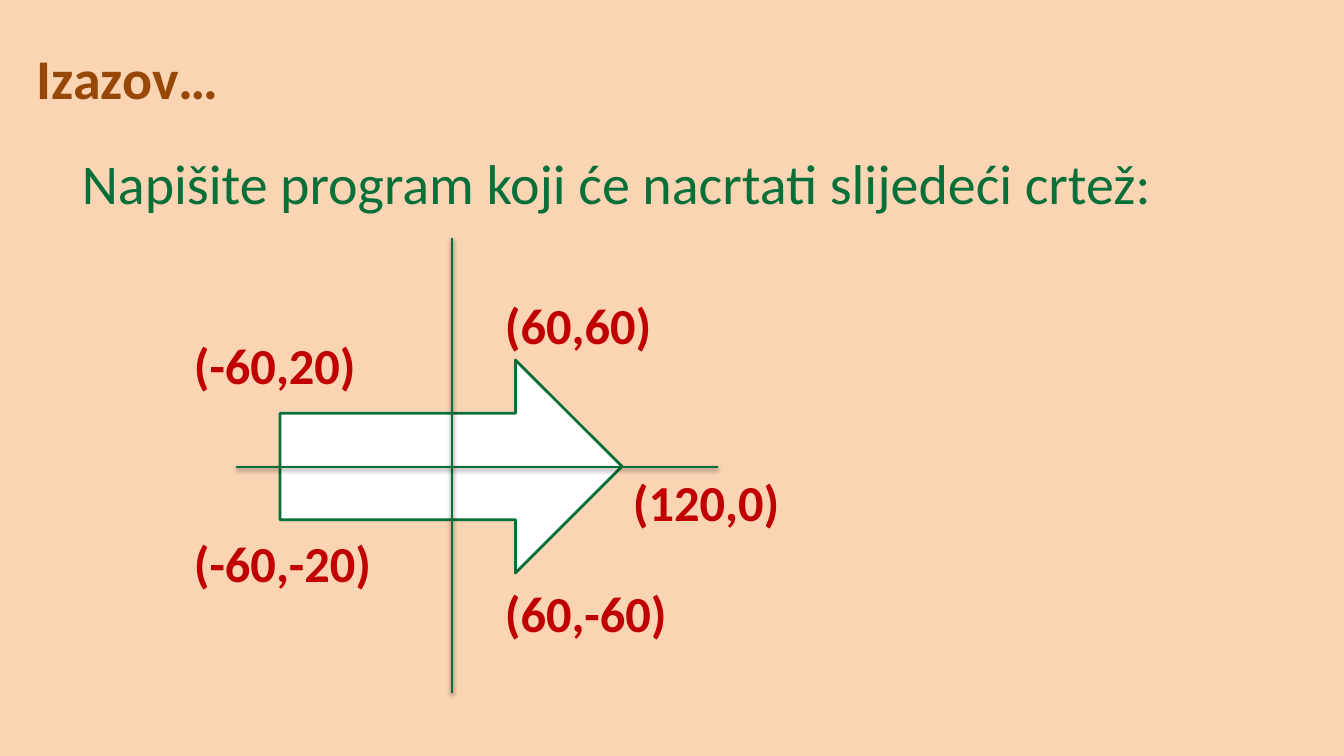
from lxml import etree
from pptx import Presentation, util as u
from pptx.dml.color import RGBColor
from pptx.enum import shapes, text
from pptx.oxml.ns import qn

# Content: text, box in px (left, top, width, height)
BROWN, GREEN, RED, WHITE, PEACH = "974806", "076F38", "C00000", "FFFFFF", "FBD4B4"
TITLE = ("Izazov…", (27, 26, 1210, 102))
TASK = ("Napišite program koji će nacrtati slijedeći crtež:", (72, 144, 1187, 518))
LABELS = [
    ("(120,0)", (623, 466, 171, 72)),
    ("(60,-60)", (495, 577, 290, 72)),
    ("(60,60)", (495, 289, 171, 72)),
    ("(-60,-20)", (184, 527, 205, 72)),
    ("(-60,20)", (184, 329, 207, 72)),
]
ARROW = (280, 360, 342, 213)
AXES = [(452, 238, 452, 693), (236, 467, 718, 467)]  # x1, y1, x2, y2
SCALE = 914400 / 100.8


def px(*lengths):
    return [u.Emu(round(n * SCALE)) for n in lengths]


def color(hex_string):
    return RGBColor.from_string(hex_string)


def add_text(slide, words, box, size, hex_string, bold=False,
             anchor=text.MSO_ANCHOR.TOP):
    tf = slide.shapes.add_textbox(*px(*box)).text_frame
    tf.word_wrap = True
    tf.vertical_anchor = anchor
    r = tf.paragraphs[0].add_run()
    r.text = words
    r.font.name, r.font.size, r.font.bold = "Calibri", u.Pt(size), bold
    r.font.color.rgb = color(hex_string)


def set_line(sp):
    sp.line.color.rgb = color(GREEN)
    sp.line.width = u.Pt(2)


def add_shadow(sp):
    effects = etree.SubElement(sp._element.spPr, qn("a:effectLst"))
    shadow = etree.SubElement(effects, qn("a:outerShdw"), blurRad="40000",
                              dist="20000", dir="5400000", rotWithShape="0")
    black = etree.SubElement(shadow, qn("a:srgbClr"), val="000000")
    etree.SubElement(black, qn("a:alpha"), val="38000")


prs = Presentation()
prs.slide_width, prs.slide_height = px(1344, 756)
s = prs.slides.add_slide(prs.slide_layouts[6])
s.background.fill.solid()
s.background.fill.fore_color.rgb = color(PEACH)

# Title and task
add_text(s, *TITLE, 40, BROWN, bold=True, anchor=text.MSO_ANCHOR.MIDDLE)
add_text(s, *TASK, 40, GREEN)

# Arrow
sp = s.shapes.add_shape(shapes.MSO_SHAPE.RIGHT_ARROW, *px(*ARROW))
sp.shadow.inherit = False
sp.fill.solid()
sp.fill.fore_color.rgb = color(WHITE)
set_line(sp)

# Axes
for ends in AXES:
    axis = s.shapes.add_connector(shapes.MSO_CONNECTOR.STRAIGHT, *px(*ends))
    set_line(axis)
    add_shadow(axis)

# Coordinates of the corners
for words, box in LABELS:
    add_text(s, words, box, 36, RED, bold=True)

prs.save("out.pptx")
